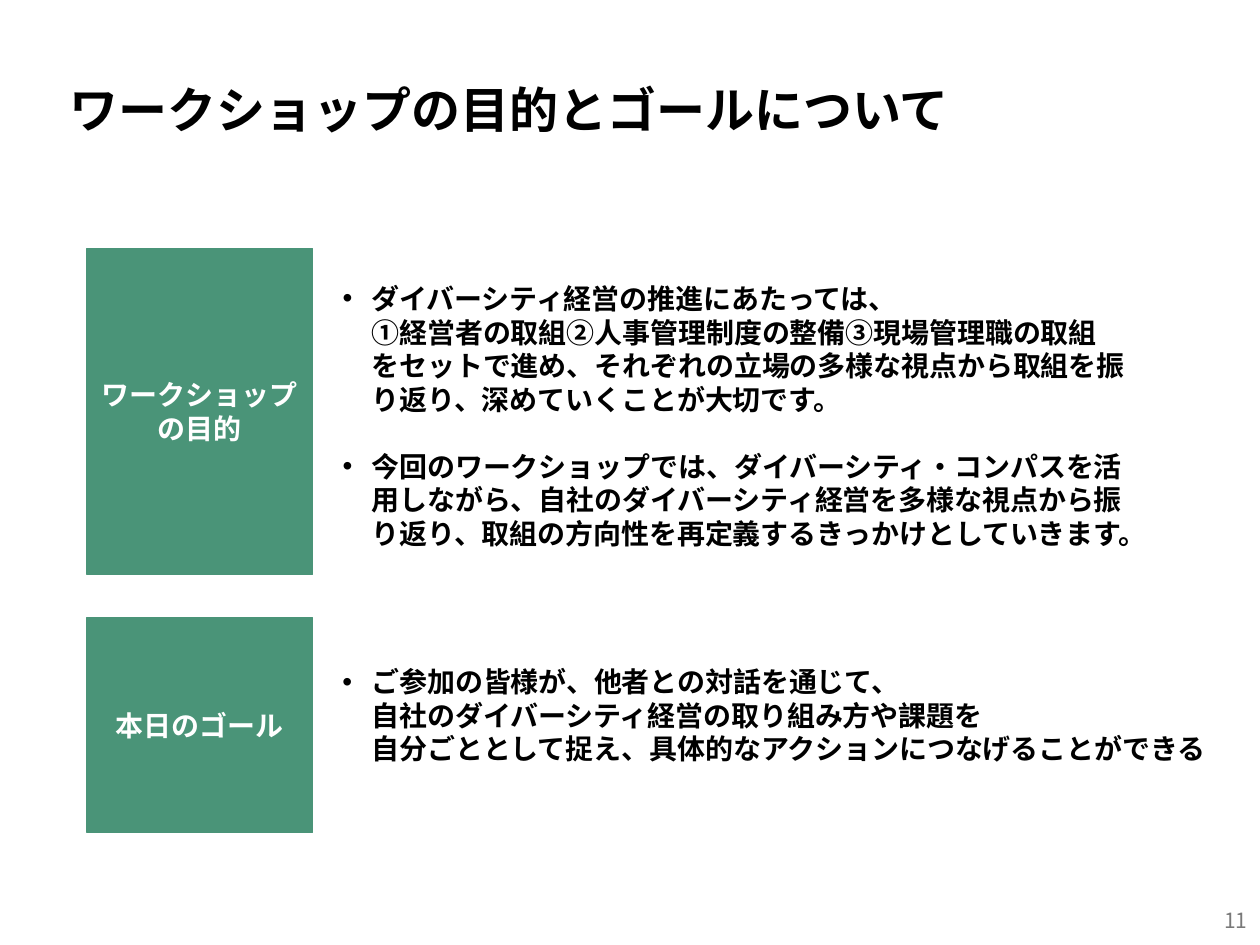
from dataclasses import dataclass

from lxml.etree import SubElement
from pptx import Presentation
from pptx.dml.color import RGBColor
from pptx.enum.shapes import MSO_SHAPE as Shape
from pptx.enum.text import MSO_ANCHOR as Anchor, MSO_AUTO_SIZE as Fit, PP_ALIGN as Align
from pptx.oxml.ns import qn
from pptx.util import Inches, Pt

FONT = "Noto Sans CJK JP"
COLORS = {"text": "000000", "green": "4A9478", "white": "FFFFFF", "gray": "797979"}


@dataclass
class Section:
    label: str
    top: float
    height: float
    body_top: float
    body_width: float
    body_height: float
    points: list[str]


SECTIONS = [
    Section("ワークショップの目的", 1.97, 2.59, 2.17, 6.61, 2.26, [
        "ダイバーシティ経営の推進にあたっては、\n"
        "①経営者の取組②人事管理制度の整備③現場管理職の取組\n"
        "をセットで進め、それぞれの立場の多様な視点から取組を振り返り、深めていくことが大切です。",
        "今回のワークショップでは、ダイバーシティ・コンパスを活用しながら、"
        "自社のダイバーシティ経営を多様な視点から振り返り、"
        "取組の方向性を再定義するきっかけとしていきます。",
    ]),
    Section("本日のゴール", 4.9, 1.71, 5.22, 7.3, 0.91, [
        "ご参加の皆様が、他者との対話を通じて、\n"
        "自社のダイバーシティ経営の取り組み方や課題を\n"
        "自分ごととして捉え、具体的なアクションにつなげることができる",
    ]),
]


def rgb(name: str) -> RGBColor:
    return RGBColor.from_string(COLORS[name])


def style(para, size: float, color: str, bold: bool = True, align=Align.LEFT) -> None:
    para.alignment = align
    font = para.font
    font.name, font.size, font.bold = FONT, Pt(size), bold
    font.color.rgb = rgb(color)
    props = para._p.pPr.find(qn("a:defRPr"))
    SubElement(props, qn("a:ea")).set("typeface", FONT)


def add_bullet(para) -> None:
    props = para._p.get_or_add_pPr()
    props.set("marL", str(Inches(0.23)))
    props.set("indent", str(Inches(-0.23)))
    SubElement(props, qn("a:buFont")).set("typeface", "Arial")
    SubElement(props, qn("a:buChar")).set("char", "•")


def add_box(slide, left: float, top: float, width: float, height: float):
    """Add a wrapping, vertically centred text box and return its frame."""
    box = slide.shapes.add_textbox(Inches(left), Inches(top), Inches(width), Inches(height))
    frame = box.text_frame
    frame.word_wrap = True
    frame.vertical_anchor = Anchor.MIDDLE
    return frame


def add_title(slide, text: str) -> None:
    title = slide.shapes.title
    title.left, title.top = Inches(0.45), Inches(0.17)
    title.width, title.height = Inches(8.62), Inches(1.45)
    frame = title.text_frame
    frame.text = text
    frame.auto_size = Fit.NONE
    frame.vertical_anchor = Anchor.MIDDLE
    para = frame.paragraphs[0]
    para.line_spacing = 0.9
    style(para, 28, "text")


def add_label(slide, sec: Section) -> None:
    box = slide.shapes.add_shape(
        Shape.RECTANGLE, Inches(0.69), Inches(sec.top), Inches(1.79), Inches(sec.height))
    box.shadow.inherit = False
    box.fill.solid()
    box.fill.fore_color.rgb = rgb("green")
    box.line.color.rgb = rgb("green")
    box.line.width = Pt(0.75)
    frame = box.text_frame
    frame.text = sec.label
    frame.word_wrap = True
    frame.vertical_anchor = Anchor.MIDDLE
    style(frame.paragraphs[0], 16, "white", align=Align.CENTER)


def add_body(slide, sec: Section) -> None:
    frame = add_box(slide, 2.62, sec.body_top, sec.body_width, sec.body_height)
    frame.auto_size = Fit.SHAPE_TO_FIT_TEXT
    for i, point in enumerate(sec.points):
        para = frame.add_paragraph() if i else frame.paragraphs[0]
        para.text = point
        if i:
            para.space_before = Pt(19)
        add_bullet(para)
        style(para, 16, "text")


def main() -> None:
    deck = Presentation()
    deck.slide_width, deck.slide_height = Inches(10), Inches(7.5)
    slide = deck.slides.add_slide(deck.slide_layouts[5])
    add_title(slide, "ワークショップの目的とゴールについて")
    for sec in SECTIONS:
        add_label(slide, sec)
        add_body(slide, sec)
    number = add_box(slide, 7.75, 7.1, 2.25, 0.4)
    number.text = "11"
    style(number.paragraphs[0], 12, "gray", bold=False, align=Align.RIGHT)
    deck.save("out.pptx")


if __name__ == "__main__":
    main()
